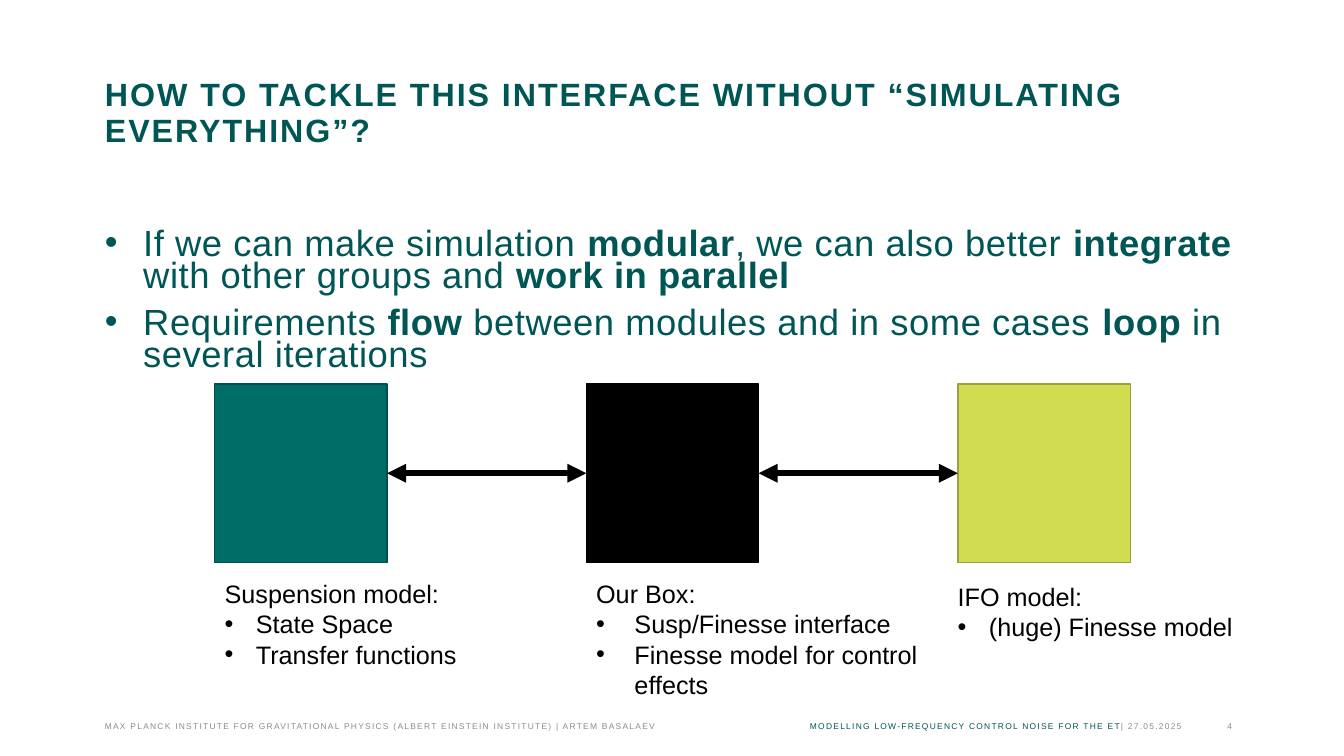
import pptx
import pptx.util
import pptx.dml.color
import pptx.enum.shapes
import pptx.enum.text
import pptx.oxml
import pptx.oxml.ns

Inches = pptx.util.Inches
Pt = pptx.util.Pt
RGBColor = pptx.dml.color.RGBColor
MSO_ANCHOR = pptx.enum.text.MSO_ANCHOR
MSO_AUTO_SIZE = pptx.enum.text.MSO_AUTO_SIZE

DARK_TEAL = RGBColor(0x00, 0x55, 0x55)
TEAL = RGBColor(0x00, 0x6C, 0x66)
TEAL_EDGE = RGBColor(0x00, 0x50, 0x4B)
LIME = RGBColor(0xD2, 0xDC, 0x51)
LIME_EDGE = RGBColor(0x9B, 0xA3, 0x3C)
BLACK = RGBColor(0x00, 0x00, 0x00)
GREY = RGBColor(0x8C, 0x8C, 0x8C)

LEFT, WIDTH = 1.04, 11.26
BOX_WIDTH, BOX_HEIGHT = 1.71, 1.77

# fill, edge, caption offset (x, y), caption width, bullet indent, heading, points
MODULES = [
    (TEAL, TEAL_EDGE, (0, 0), 3.23, 0.31, "Suspension model:",
     ["State Space", "Transfer functions"]),
    (BLACK, BLACK, (0, 0), 3.84, 0.38, "Our Box:",
     ["Susp/Finesse interface", "Finesse model for control effects"]),
    (LIME, LIME_EDGE, (-0.1, 0.03), 3.23, 0.31, "IFO model:",
     ["(huge) Finesse model"]),
]


def add_xml(parent, tag, **attributes):
    child = pptx.oxml.parse_xml(f"<a:{tag} {pptx.oxml.ns.nsdecls('a')}/>")
    for name, value in attributes.items():
        child.set(name, str(value))
    parent.append(child)
    return child


def write(frame, runs, size, color=BLACK, first=False, bold=False, spacing=0,
          bullet_indent=None, tabs=(), line=None, before=0, after=0):
    """Write one paragraph; runs are (text, format changes) pairs."""
    paragraph = frame.paragraphs[0] if first else frame.add_paragraph()
    properties = paragraph._p.get_or_add_pPr()
    if bullet_indent is not None:
        properties.set("marL", str(Inches(bullet_indent)))
        properties.set("indent", str(-Inches(bullet_indent)))
        add_xml(properties, "buFont", typeface="Arial")
        add_xml(properties, "buChar", char="•")
    if tabs:
        stops = add_xml(properties, "tabLst")
        for position in tabs:
            add_xml(stops, "tab", pos=Inches(position), algn="r")
    paragraph.alignment = pptx.enum.text.PP_ALIGN.LEFT
    paragraph.space_before = Pt(before)
    paragraph.space_after = Pt(after)
    if line:
        paragraph.line_spacing = Pt(line)
    for text, changes in runs:
        run = paragraph.add_run()
        run.text = text
        run.font.name = "Arial"
        run.font.size = Pt(size)
        run.font.bold = changes.get("bold", bold)
        run.font.color.rgb = changes.get("color", color)
        if spacing:
            run._r.get_or_add_rPr().set("spc", str(round(spacing * 100)))


def place(shape, left, top, width, height):
    shape.left, shape.top = Inches(left), Inches(top)
    shape.width, shape.height = Inches(width), Inches(height)


def prepare(frame, anchor=MSO_ANCHOR.TOP):
    frame.margin_left = frame.margin_right = 0
    frame.margin_top = frame.margin_bottom = 0
    frame.word_wrap = True
    frame.auto_size = MSO_AUTO_SIZE.NONE
    frame.vertical_anchor = anchor


def add_title(slide, left, top, width, height):
    title = slide.shapes.title
    place(title, left, top, width, height)
    prepare(title.text_frame)
    write(title.text_frame,
          [("HOW TO TACKLE THIS INTERFACE WITHOUT “SIMULATING EVERYTHING”?", {})],
          23, DARK_TEAL, first=True, bold=True, spacing=1.4, line=26, after=18)


def add_body(slide, left, top, width, height):
    body = slide.placeholders[1]
    place(body, left, top, width, height)
    prepare(body.text_frame)
    strong = {"bold": True}
    points = [
        [("If we can make simulation ", {}), ("modular", strong),
         (", we can also better ", {}), ("integrate", strong),
         (" with other groups and ", {}), ("work in parallel", strong)],
        [("Requirements ", {}), ("flow", strong),
         (" between modules and in some cases ", {}), ("loop", strong),
         (" in several iterations", {})],
    ]
    for index, runs in enumerate(points):
        write(body.text_frame, runs, 26, DARK_TEAL, first=index == 0,
              spacing=0.4, bullet_indent=0.38, line=23,
              before=10 if index else 0)


def add_module(slide, left, top, fill, edge):
    module = slide.shapes.add_shape(
        pptx.enum.shapes.MSO_SHAPE.RECTANGLE, Inches(left), Inches(top),
        Inches(BOX_WIDTH), Inches(BOX_HEIGHT))
    module.shadow.inherit = False
    module.fill.solid()
    module.fill.fore_color.rgb = fill
    module.line.color.rgb = edge
    module.line.width = Pt(1)
    return module


def add_caption(slide, left, top, width, indent, heading, points):
    height = 0.1 + 0.3 * (len(points) + 1)
    caption = slide.shapes.add_textbox(
        Inches(left), Inches(top), Inches(width), Inches(height))
    frame = caption.text_frame
    frame.word_wrap = True
    frame.auto_size = MSO_AUTO_SIZE.SHAPE_TO_FIT_TEXT
    write(frame, [(heading, {})], 18, first=True)
    for point in points:
        write(frame, [(point, {})], 18, bullet_indent=indent)


def add_exchange_arrow(slide, source, target):
    arrow = slide.shapes.add_connector(
        pptx.enum.shapes.MSO_CONNECTOR.STRAIGHT, 0, 0, 0, 0)
    arrow.begin_connect(source, 3)
    arrow.end_connect(target, 1)
    arrow.line.color.rgb = BLACK
    arrow.line.width = Pt(4.5)
    outline = arrow.line._get_or_add_ln()
    add_xml(outline, "headEnd", type="triangle")
    add_xml(outline, "tailEnd", type="triangle")
    add_xml(arrow._element.spPr, "effectLst")


def add_module_chain(slide, left, top, width):
    pitch = (width - BOX_WIDTH) / (len(MODULES) - 1)
    modules = []
    for index, (fill, edge, offset, *caption) in enumerate(MODULES):
        box_left = left + index * pitch
        modules.append(add_module(slide, box_left, top, fill, edge))
        add_caption(slide, box_left + offset[0],
                    top + BOX_HEIGHT + 0.11 + offset[1], *caption)
    for source, target in zip(modules, modules[1:]):
        add_exchange_arrow(slide, source, target)


def add_footer(slide, left, top, width, height):
    footer = slide.shapes.add_textbox(
        Inches(left), Inches(top), Inches(width), Inches(height))
    prepare(footer.text_frame, MSO_ANCHOR.BOTTOM)
    write(footer.text_frame, [
        ("MAX PLANCK INSTITUTE FOR GRAVITATIONAL PHYSICS "
         "(ALBERT EINSTEIN INSTITUTE) | ARTEM BASALAEV\t", {}),
        ("MODELLING LOW-FREQUENCY CONTROL NOISE FOR THE ET", {"color": DARK_TEAL}),
        ("| 27.05.2025\t4", {}),
    ], 6, GREY, first=True, spacing=0.9, tabs=(10.69, 11.18))


def main():
    presentation = pptx.Presentation()
    presentation.slide_width = Inches(13.33)
    presentation.slide_height = Inches(7.5)
    slide = presentation.slides.add_slide(presentation.slide_layouts[1])
    # Heading and key points
    add_title(slide, LEFT, 0.76, WIDTH, 1.54)
    add_body(slide, LEFT, 2.3, WIDTH, 1.58)
    # Three linked modules with captions
    add_module_chain(slide, 2.13, 3.81, 9.08)
    # Footer line
    add_footer(slide, LEFT, 7.05, WIDTH, 0.2)
    presentation.save("out.pptx")


if __name__ == "__main__":
    main()
